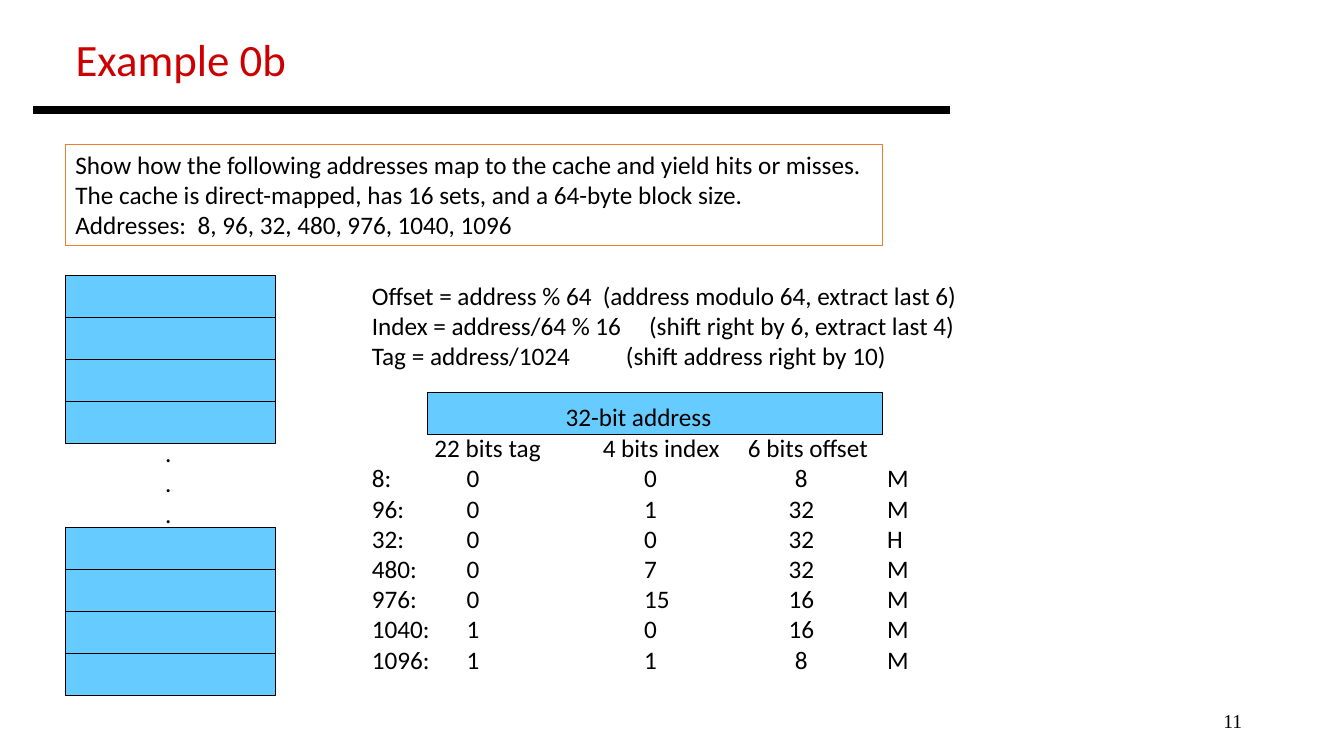
from lxml.etree import SubElement
from pptx import Presentation
from pptx.dml.color import RGBColor
from pptx.enum.shapes import MSO_CONNECTOR, MSO_SHAPE
from pptx.enum.text import MSO_ANCHOR as ANCHOR, PP_ALIGN as ALIGN
from pptx.oxml.ns import qn
from pptx.util import Inches, Pt


def color(value):
    return RGBColor.from_string(value)


def write(shape, text, size=18, font="Calibri", ink="000000", align=ALIGN.LEFT,
          anchor=ANCHOR.TOP, tabs=()):
    """Fill a shape with lines; tabs holds (position, alignment) stops per line."""
    frame = shape.text_frame
    frame.word_wrap = True
    frame.vertical_anchor = anchor
    frame.text = text
    for number, paragraph in enumerate(frame.paragraphs):
        paragraph.alignment = align
        paragraph.font.size = Pt(size)
        paragraph.font.name = font
        paragraph.font.color.rgb = color(ink)
        if tabs:
            properties = paragraph._p.get_or_add_pPr()
            stops = SubElement(properties, qn("a:tabLst"))
            properties.insert(0, stops)
            for position, kind in tabs[number]:
                SubElement(stops, qn("a:tab"), pos=str(Inches(position)), algn=kind)


presentation = Presentation()
presentation.slide_width = Inches(13.33)
presentation.slide_height = Inches(7.5)
slide = presentation.slides.add_slide(presentation.slide_layouts[5])
shapes = slide.shapes

# Title and rule
title = shapes.title
title.left, title.top = Inches(0.65), Inches(0.26)
title.width, title.height = Inches(2.31), Inches(0.64)
write(title, "Example 0b", size=32, ink="CC0000")

rule = shapes.add_connector(
    MSO_CONNECTOR.STRAIGHT, Inches(0.33), Inches(1.09), Inches(9.42), Inches(1.09))
rule.line.color.rgb = color("000000")
rule.line.width = Pt(6)
SubElement(rule._element.spPr, qn("a:effectLst"))

# Boxes: question, address bar, and the first and last four cache sets
SET_HEIGHT = 0.417
boxes = [(0.65, 1.43, 8.1, 1.01, None, "ED7D31"),
         (4.24, 3.89, 4.51, 0.42, "66CCFF", "000000")]
for group_top in (2.73, 5.23):
    for row in range(4):
        boxes.append((0.65, group_top + row * SET_HEIGHT, 2.08, SET_HEIGHT,
                      "66CCFF", "000000"))

drawn = []
for left, top, width, height, fill, outline in boxes:
    box = shapes.add_shape(
        MSO_SHAPE.RECTANGLE, Inches(left), Inches(top), Inches(width), Inches(height))
    box.shadow.inherit = False
    if fill:
        box.fill.solid()
        box.fill.fore_color.rgb = color(fill)
    else:
        box.fill.background()
    box.line.color.rgb = color(outline)
    box.line.width = Pt(0.75)
    drawn.append(box)

question, address_bar = drawn[:2]
write(question, "Show how the following addresses map to the cache and yield hits or misses.\n"
                "The cache is direct-mapped, has 16 sets, and a 64-byte block size.\n"
                "Addresses:  8, 96, 32, 480, 976, 1040, 1096")
address_bar.text_frame.margin_left = Inches(1.37)
address_bar.text_frame.margin_top = Inches(0.12)
write(address_bar, "32-bit address", anchor=ANCHOR.MIDDLE)

# Dots between the two groups of sets
dots = shapes.add_textbox(Inches(1.54), Inches(4.29), Inches(0.27), Inches(1.01))
write(dots, ".\n.\n.")

# Formulas
formulas = shapes.add_textbox(Inches(3.59), Inches(2.73), Inches(6.07), Inches(1.01))
write(formulas, "Offset = address % 64\t(address modulo 64, extract last 6)\n"
                "Index = address/64 % 16\t(shift right by 6, extract last 4)\n"
                "Tag = address/1024\t(shift address right by 10)",
      tabs=[[(2.29, "l")], [(2.75, "l")], [(2.52, "l")]])

# Address breakdown: address, tag, index, offset, hit or miss
accesses = [("8:", 0, 0, 8, "M"),
            ("96:", 0, 1, 32, "M"),
            ("32:", 0, 0, 32, "H"),
            ("480:", 0, 7, 32, "M"),
            ("976:", 0, 15, 16, "M"),
            ("1040:", 1, 0, 16, "M"),
            ("1096:", 1, 1, 8, "M")]
lines = ["\t22 bits tag\t4 bits index\t6 bits offset"]
lines += ["\t".join(map(str, access)) for access in accesses]
header_tabs = [(0.62, "l"), (2.29, "l"), (3.73, "l")]
access_tabs = [(0.94, "l"), (2.7, "l"), (4.26, "ctr"), (5.11, "l")]
breakdown = shapes.add_textbox(Inches(3.59), Inches(4.24), Inches(6.07), Inches(2.53))
write(breakdown, "\n".join(lines), tabs=[header_tabs] + [access_tabs] * len(accesses))

# Slide number
slide_number = shapes.add_textbox(Inches(9.42), Inches(6.95), Inches(3), Inches(0.4))
write(slide_number, "11", size=14, font="Times New Roman", align=ALIGN.RIGHT,
      anchor=ANCHOR.MIDDLE)

presentation.save("out.pptx")
